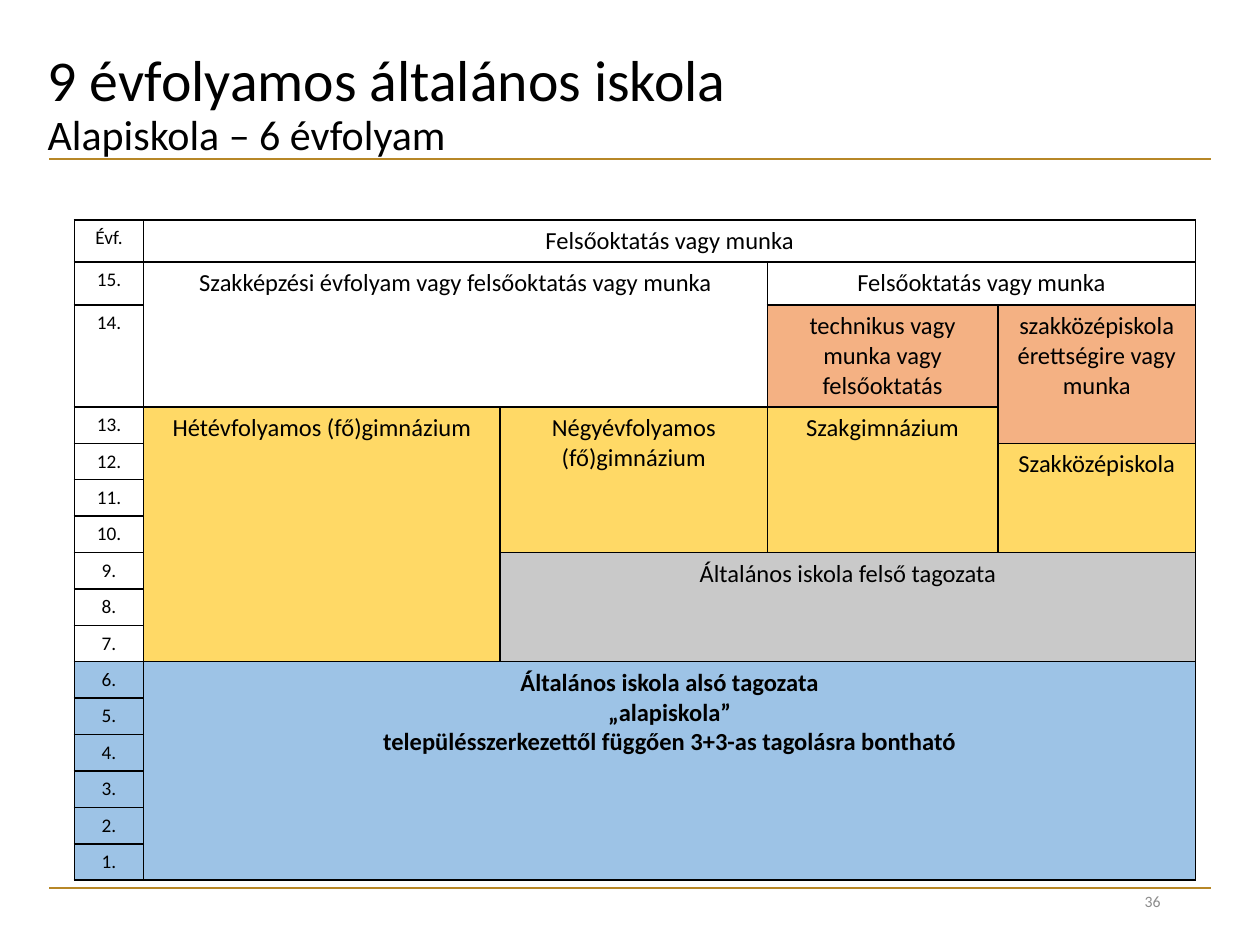
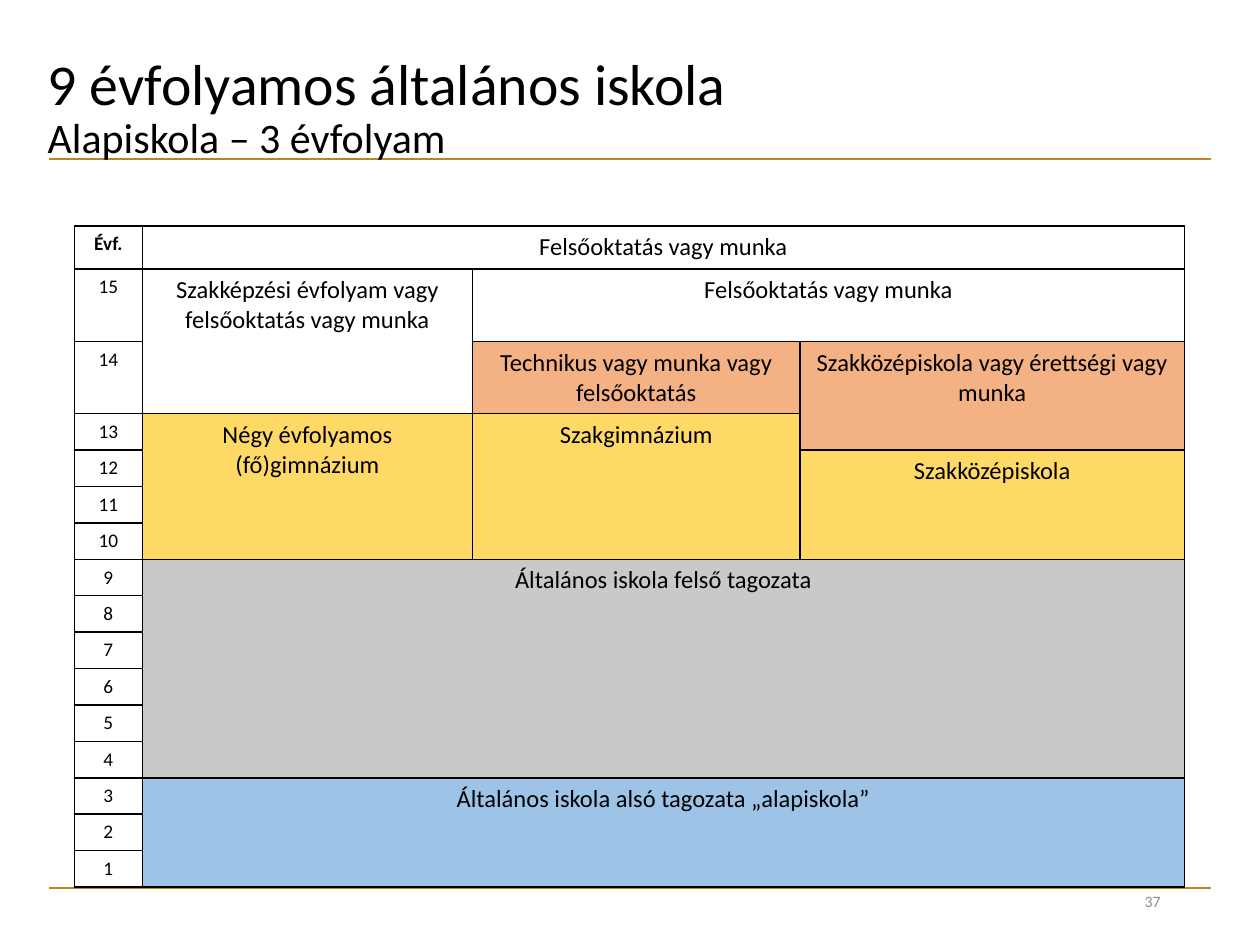
from dataclasses import dataclass

from lxml import etree
from pptx import Presentation
from pptx import util as u
from pptx.dml.color import RGBColor
from pptx.enum import shapes, text
from pptx.oxml.ns import qn


@dataclass(frozen=True)
class Theme:
    font: str = "Calibri"
    ink: str = "000000"
    muted: str = "8C8C8C"
    rule: str = "B78727"
    white: str = "FFFFFF"
    orange: str = "F4B183"
    yellow: str = "FFD966"
    grey: str = "C9C9C9"
    blue: str = "9DC3E6"
    title: float = 33
    subtitle: float = 24
    body: float = 14
    grade: float = 11
    number: float = 9


theme = Theme()
deck = Presentation()
deck.slide_width, deck.slide_height = u.Inches(10), u.Inches(7.5)
# The page is a grid of 100 columns by 75 rows; all lengths count its units.
unit = deck.slide_width / 100


def write(para, words, size=theme.body, color=theme.ink, bold=False, align=None):
    """Append one formatted run to a paragraph."""
    if align is not None:
        para.alignment = align
    span = para.add_run()
    span.text = words
    span.font.name = theme.font
    span.font.size = u.Pt(size)
    span.font.bold = bold
    span.font.color.rgb = RGBColor.from_string(color)


def paint(cell, color):
    """Fill a cell and give it a thin border on all four sides."""
    cell.fill.solid()
    cell.fill.fore_color.rgb = RGBColor.from_string(color)
    properties = cell._tc.get_or_add_tcPr()
    for place, side in enumerate(("lnL", "lnR", "lnT", "lnB")):
        line = etree.Element(qn("a:" + side), w=str(u.Pt(1)))
        fill = etree.SubElement(line, qn("a:solidFill"))
        etree.SubElement(fill, qn("a:srgbClr"), val=theme.ink)
        properties.insert(place, line)


# Each block: first row, first column, rows, columns, fill, bold, lines of text
pages = [
    dict(
        number=36, subtitle="Alapiskola – 6 évfolyam", title_top=3.6,
        table_top=17.45, columns=[5.5, 28.3, 21.2, 18.3, 15.7],
        top_rows=[3.35, 3.4, 8.1], suffix=".", blue_grades=6, bold_head=False,
        blocks=[
            (0, 1, 1, 4, theme.white, False, ["Felsőoktatás vagy munka"]),
            (1, 1, 2, 2, theme.white, False,
             ["Szakképzési évfolyam vagy felsőoktatás vagy munka"]),
            (1, 3, 1, 2, theme.white, False, ["Felsőoktatás vagy munka"]),
            (2, 3, 1, 1, theme.orange, False,
             ["technikus vagy munka vagy felsőoktatás"]),
            (2, 4, 2, 1, theme.orange, False,
             ["szakközépiskola érettségire vagy munka"]),
            (3, 1, 7, 1, theme.yellow, False, ["Hétévfolyamos (fő)gimnázium"]),
            (3, 2, 4, 1, theme.yellow, False, ["Négyévfolyamos (fő)gimnázium"]),
            (3, 3, 4, 1, theme.yellow, False, ["Szakgimnázium"]),
            (4, 4, 3, 1, theme.yellow, False, ["Szakközépiskola"]),
            (7, 2, 3, 3, theme.grey, False, ["Általános iskola felső tagozata"]),
            (10, 1, 6, 4, theme.blue, True,
             ["Általános iskola alsó tagozata", "„alapiskola”",
              "településszerkezettől függően 3+3-as tagolásra bontható"]),
        ],
    ),
    dict(
        number=37, subtitle="Alapiskola – 3 évfolyam", title_top=3.9,
        table_top=17.95, columns=[5.4, 26.2, 26, 30.5],
        top_rows=[3.4, 5.77, 5.72], suffix="", blue_grades=0, bold_head=True,
        blocks=[
            (0, 1, 1, 3, theme.white, False, ["Felsőoktatás vagy munka"]),
            (1, 1, 2, 1, theme.white, False,
             ["Szakképzési évfolyam vagy felsőoktatás vagy munka"]),
            (1, 2, 1, 2, theme.white, False, ["Felsőoktatás vagy munka"]),
            (2, 2, 1, 1, theme.orange, False,
             ["Technikus vagy munka vagy felsőoktatás"]),
            (2, 3, 2, 1, theme.orange, False,
             ["Szakközépiskola vagy érettségi vagy munka"]),
            (3, 1, 4, 1, theme.yellow, False, ["Négy évfolyamos (fő)gimnázium"]),
            (3, 2, 4, 1, theme.yellow, False, ["Szakgimnázium"]),
            (4, 3, 3, 1, theme.yellow, False, ["Szakközépiskola"]),
            (7, 1, 6, 3, theme.grey, False, ["Általános iskola felső tagozata"]),
            (13, 1, 3, 3, theme.blue, False,
             ["Általános iskola alsó tagozata „alapiskola”"]),
        ],
    ),
]
grades = range(15, 0, -1)
grade_row = 2.89

for content in pages:
    page = deck.slides.add_slide(deck.slide_layouts[6])

    for height in (12.6, 70.5):
        left, right, y = (int(unit * n) for n in (3.9, 96.1, height))
        rule = page.shapes.add_connector(
            shapes.MSO_CONNECTOR.STRAIGHT, left, y, right, y)
        rule.line.color.rgb = RGBColor.from_string(theme.rule)
        rule.line.width = u.Pt(1)
        etree.SubElement(rule._element.spPr, qn("a:effectLst"))

    area = (2.8, content["title_top"], 92.9, 8.4)
    title = page.shapes.add_textbox(*(int(unit * n) for n in area)).text_frame
    title.word_wrap = True
    para = title.paragraphs[0]
    para.line_spacing = 0.9
    write(para, "9 évfolyamos általános iskola", size=theme.title)
    para.add_line_break()
    write(para, content["subtitle"], size=theme.subtitle)

    area = (70.6, 69.5, 22.5, 4)
    footer = page.shapes.add_textbox(*(int(unit * n) for n in area)).text_frame
    footer.word_wrap = True
    footer.vertical_anchor = text.MSO_ANCHOR.MIDDLE
    write(footer.paragraphs[0], str(content["number"]), size=theme.number,
          color=theme.muted, align=text.PP_ALIGN.RIGHT)

    columns = content["columns"]
    rows = content["top_rows"] + [grade_row] * 13
    area = (5.9, content["table_top"], sum(columns), sum(rows))
    frame = page.shapes.add_table(
        len(rows), len(columns), *(int(unit * n) for n in area))
    table = frame.table
    table.first_row = table.horz_banding = False
    for column, width in zip(table.columns, columns):
        column.width = int(unit * width)
    for row, height in zip(table.rows, rows):
        row.height = int(unit * height)

    labels = ["Évf."] + [f"{grade}{content['suffix']}" for grade in grades]
    first_blue = len(rows) - content["blue_grades"]
    grade_blocks = [
        (row, 0, 1, 1, theme.blue if row >= first_blue else theme.white,
         row == 0 and content["bold_head"], [label])
        for row, label in enumerate(labels)
    ]
    for row, column, tall, wide, fill, bold, lines in grade_blocks + content["blocks"]:
        for r in range(row, row + tall):
            for c in range(column, column + wide):
                paint(table.cell(r, c), fill)
        cell = table.cell(row, column)
        if tall * wide > 1:
            cell.merge(table.cell(row + tall - 1, column + wide - 1))
        for index, words in enumerate(lines):
            para = cell.text_frame.add_paragraph() if index else cell.text_frame.paragraphs[0]
            write(para, words, size=theme.body if column else theme.grade,
                  bold=bold, align=text.PP_ALIGN.CENTER)

deck.save("out.pptx")
